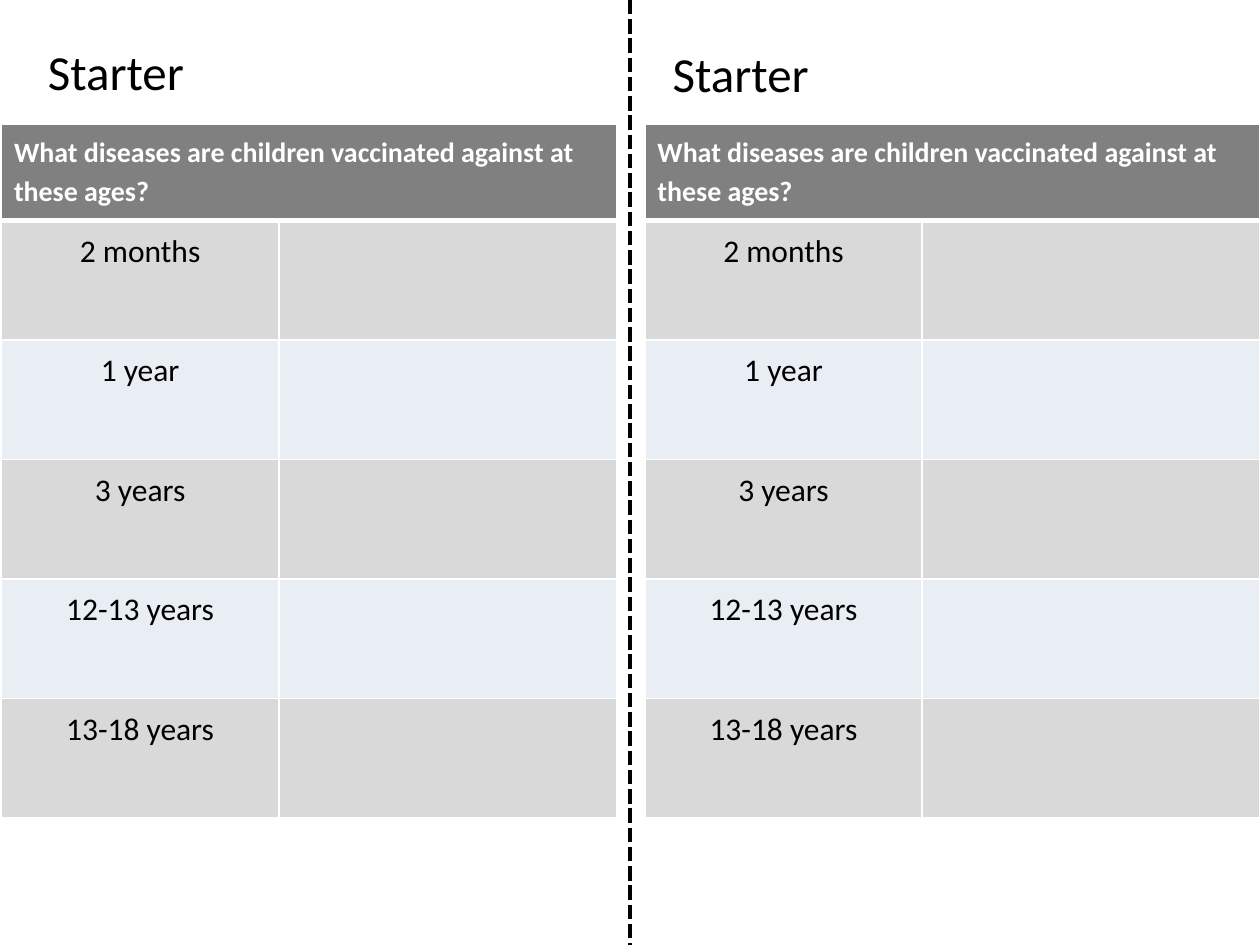
from dataclasses import dataclass

from pptx import Presentation, util as u
from pptx.dml.color import RGBColor
from pptx.enum import dml, shapes, text
from pptx.oxml import parse_xml
from pptx.oxml.ns import nsdecls


@dataclass(frozen=True)
class Theme:
    """Colours, font and type sizes of the handout."""
    font: str = "Calibri"
    ink: str = "000000"
    white: str = "FFFFFF"
    head: str = "808080"
    bands: tuple = ("D9D9D9", "E9EDF4")
    title: int = 28
    ask: int = 16
    age: int = 18
    grid: int = 1
    rule: int = 3
    cut: float = 2.75


LOOK = Theme()
ASK = "What diseases are children vaccinated against at these ages?"
AGES = ("2 months", "1 year", "3 years", "12-13 years", "13-18 years")
COLS = (5.59, 6.81)
ROWS = (1.93,) + (2.41,) * len(AGES)


def apply(item, **values):
    """Set each named attribute on the item."""
    for name, value in values.items():
        setattr(item, name, value)


def write(frame, words, size, ink=LOOK.ink, bold=False, **layout):
    """Write one styled paragraph into a text frame."""
    para = frame.paragraphs[0]
    apply(para, **layout)
    run = para.add_run()
    run.text = words
    apply(run.font, name=LOOK.font, size=u.Pt(size), bold=bold)
    run.font.color.rgb = RGBColor.from_string(ink)


def paint(cell, fill, top, bottom):
    """Give a cell its white borders and solid fill."""
    props = cell._tc.get_or_add_tcPr()
    sides = {"L": LOOK.grid, "R": LOOK.grid, "T": top, "B": bottom}
    for side, width in sides.items():
        props.append(parse_xml(
            f'<a:ln{side} {nsdecls("a")} w="{u.Pt(width)}"><a:solidFill>'
            f'<a:srgbClr val="{LOOK.white}"/></a:solidFill></a:ln{side}>'))
    cell.fill.solid()
    cell.fill.fore_color.rgb = RGBColor.from_string(fill)


def add_title(shape, left, top):
    """Place and format the heading of one half."""
    apply(shape, left=u.Cm(left), top=u.Cm(top),
          width=u.Cm(3.28), height=u.Cm(1.45))
    frame = shape.text_frame
    apply(frame, word_wrap=False, vertical_anchor=text.MSO_ANCHOR.TOP,
          auto_size=text.MSO_AUTO_SIZE.SHAPE_TO_FIT_TEXT)
    write(frame, "Starter", LOOK.title, alignment=text.PP_ALIGN.LEFT)


def add_grid(slide, left, top):
    """Add the question table with one row for each age."""
    grid = slide.shapes.add_table(
        len(ROWS), len(COLS), u.Cm(left), u.Cm(top),
        u.Cm(sum(COLS)), u.Cm(sum(ROWS))).table
    for col, width in zip(grid.columns, COLS):
        col.width = u.Cm(width)
    for row, height in zip(grid.rows, ROWS):
        row.height = u.Cm(height)
    for i, row in enumerate(grid.rows):
        fill = LOOK.bands[(i - 1) % 2] if i else LOOK.head
        top = LOOK.rule if i == 1 else LOOK.grid
        bottom = LOOK.grid if i else LOOK.rule
        for cell in row.cells:
            paint(cell, fill, top, bottom)
    grid.cell(0, 0).merge(grid.cell(0, 1))
    gaps = {"line_spacing": 1.15, "space_after": u.Pt(10)}
    write(grid.cell(0, 0).text_frame, ASK, LOOK.ask, LOOK.white, True, **gaps)
    for i, age in enumerate(AGES, 1):
        write(grid.cell(i, 0).text_frame, age, LOOK.age,
              alignment=text.PP_ALIGN.CENTER, **gaps)


def add_half(slide, title, left, dx, dy):
    """Fill one half of the sheet with its heading and table."""
    add_title(title, left + dx, dy)
    add_grid(slide, left, 2.51)


def add_cut(slide, x, height):
    """Draw the dashed cutting line from top to bottom."""
    cut = slide.shapes.add_connector(
        shapes.MSO_CONNECTOR.STRAIGHT, u.Cm(x), 0, u.Cm(x), u.Cm(height))
    apply(cut.line, width=u.Pt(LOOK.cut),
          dash_style=dml.MSO_LINE.SQUARE_DOT)
    cut.line.color.rgb = RGBColor.from_string(LOOK.ink)
    cut._element.spPr.append(parse_xml(f'<a:effectLst {nsdecls("a")}/>'))


def main():
    """Build the two-up starter sheet."""
    wide, high = 25.4, 19.05
    deck = Presentation()
    apply(deck, slide_width=u.Cm(wide), slide_height=u.Cm(high))
    slide = deck.slides.add_slide(deck.slide_layouts.get_by_name("Title Only"))
    add_half(slide, slide.shapes.title, 0.03, 0.68, 0.71)
    add_cut(slide, wide / 2, high)
    box = slide.shapes.add_textbox(0, 0, 0, 0)
    add_half(slide, box, 13, 0.31, 0.76)
    deck.save("out.pptx")


if __name__ == "__main__":
    main()
